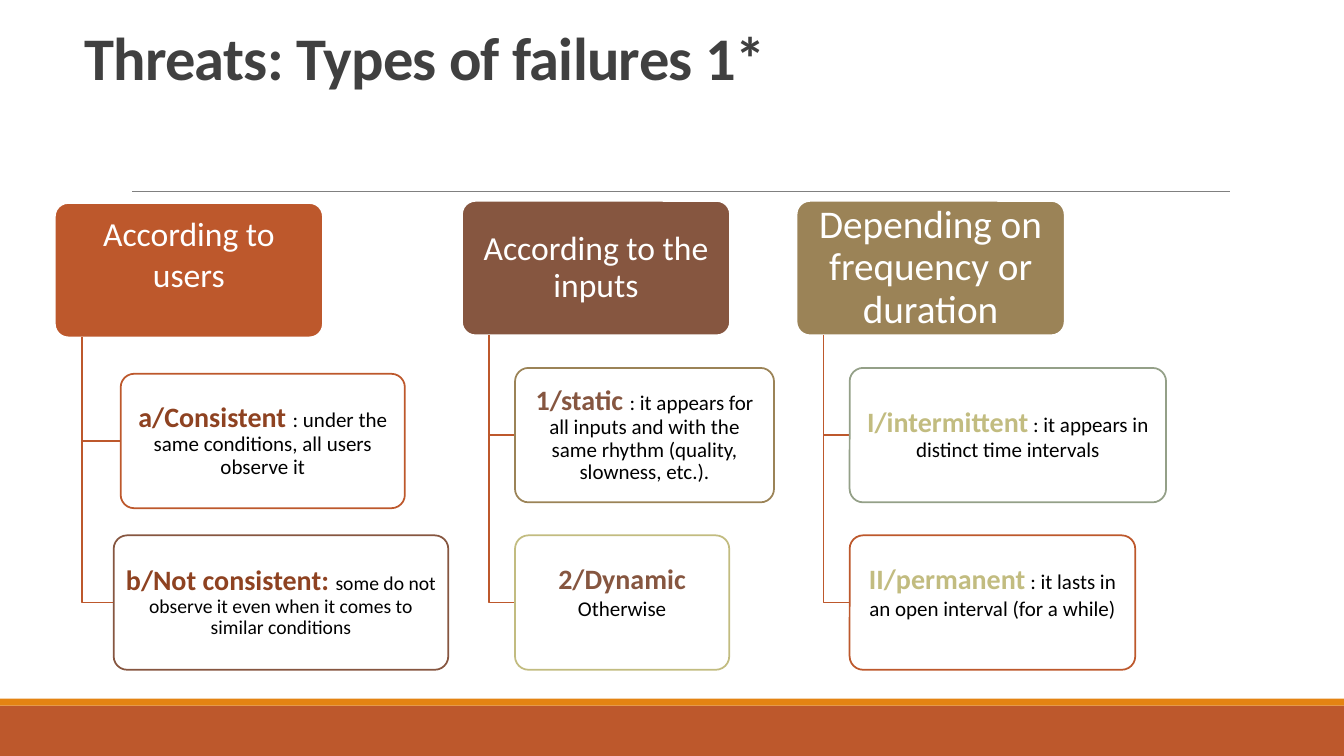
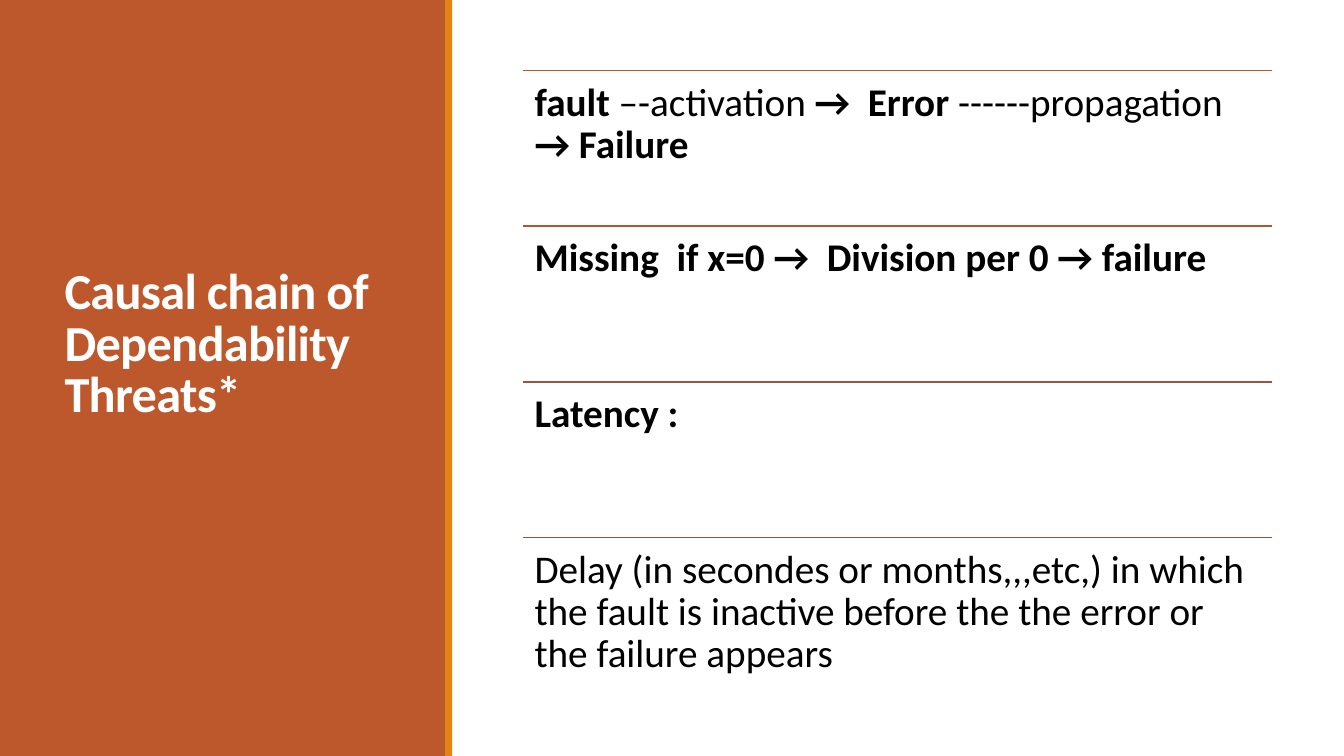
import pptx
import pptx.dml.color
import pptx.enum.shapes
import pptx.enum.text
import pptx.util
from lxml import etree

Pt = pptx.util.Pt
SHAPE = pptx.enum.shapes.MSO_SHAPE
ANCHOR = pptx.enum.text.MSO_ANCHOR
ALIGN = pptx.enum.text.PP_ALIGN

SLIDE_WIDTH, SLIDE_HEIGHT = 960, 540
FONT = "Calibri"
COLORS = {
    "rust": "BD582C",
    "orange": "E48312",
    "brown": "865640",
    "khaki": "9B8357",
    "sage": "94A088",
    "straw": "C2BC80",
    "dark_rust": "8E4221",
    "rust_brown": "AA5834",
    "red_brown": "97573A",
    "title_gray": "404040",
    "rule_gray": "808080",
    "black": "000000",
    "white": "FFFFFF",
}

HEADER_WIDTH, BOX_HEIGHT = 191.5, 96
SPINE_OFFSET = 19.2
BOTTOM_BOX_TOP = 382.4

# Each line of text is a list of runs: (text, size, colour, bold).
# Boxes with "lift" keep that much room free under their text.
FAILURE_TYPES = [
    {
        "left": 39.2, "top": 145, "fill": "rust", "spacing": 1, "lift": 24,
        "lines": [[("According to users", 24, "white", False)]],
        "children": [
            {"left": 86.2, "top": 267, "width": 203, "line": "rust",
             "lines": [[("a/Consistent ", 20, "dark_rust", True),
                        (": under the same conditions, all users observe it",
                         15, "black", False)]]},
            {"left": 81.2, "top": BOTTOM_BOX_TOP, "width": 239, "line": "brown",
             "lines": [[("b/Not consistent: ", 20, "dark_rust", True),
                        ("some do not observe it even when it comes to "
                         "similar conditions", 14, "black", False)]]},
        ],
    },
    {
        "left": 330, "top": 143.5, "fill": "brown",
        "lines": [[("According to the inputs", 24, "white", False)]],
        "children": [
            {"left": 367.9, "top": 262.8, "width": 185, "line": "khaki",
             "lines": [[("1/static ", 20, "brown", True),
                        (": it appears for all inputs and with the same "
                         "rhythm (quality, slowness, etc.).",
                         15, "black", False)]]},
            {"left": 367.9, "top": BOTTOM_BOX_TOP, "width": 153, "line": "straw",
             "spacing": 1, "lift": 16.5,
             "lines": [[("2/Dynamic", 20, "brown", True)],
                       [("Otherwise", 15, "black", False)]]},
        ],
    },
    {
        "left": 569, "top": 143.5, "fill": "khaki",
        "lines": [[("Depending on frequency or duration", 28, "white", False)]],
        "children": [
            {"left": 606.9, "top": 262.8, "width": 226, "line": "sage",
             "lines": [[("I/intermittent", 20, "straw", True),
                        (" : it appears in distinct time intervals",
                         15, "black", False)]]},
            {"left": 606.9, "top": BOTTOM_BOX_TOP, "width": 204, "line": "rust",
             "spacing": 1, "lift": 16.5,
             "lines": [[("II/permanent", 20, "straw", True),
                        (" : it lasts in an open interval (for a while)",
                         15, "black", False)]]},
        ],
    },
]

# Rule colour, then the runs of the row: (text, bold).
CAUSAL_CHAIN = [
    ("rust", [("fault", True), (" –-activation ", False), ("→  Error", True),
              (" ------propagation", False), (" → Failure", True)]),
    ("rust_brown", [("Missing  if x=0 →  Division per 0 → failure", True)]),
    ("red_brown", [("Latency :", True)]),
    ("brown", [("Delay (in secondes or months,,,etc,) in which the fault is "
                "inactive before the the error or the failure appears", False)]),
]


def rgb(color):
    return pptx.dml.color.RGBColor.from_string(COLORS[color])


def write_text(frame, lines, anchor, align=ALIGN.LEFT, spacing=0.9,
               inset=(7.2, 3.6), lift=0, tracking=None):
    """Fill a frame; tracking is in hundredths of a point."""
    frame.word_wrap = True
    frame.vertical_anchor = anchor
    frame.margin_left = frame.margin_right = Pt(inset[0])
    frame.margin_top = Pt(inset[1])
    frame.margin_bottom = Pt(inset[1] + lift)
    for index, runs in enumerate(lines):
        paragraph = frame.add_paragraph() if index else frame.paragraphs[0]
        paragraph.alignment = align
        paragraph.line_spacing = spacing
        paragraph.font.name = FONT
        for text, size, color, bold in runs:
            run = paragraph.add_run()
            run.text = text
            run.font.size = Pt(size)
            run.font.bold = bold
            run.font.color.rgb = rgb(color)
            if tracking is not None:
                run.font._element.set("spc", str(tracking))


def add_text(slide, left, top, width, height, lines, **style):
    box = slide.shapes.add_textbox(Pt(left), Pt(top), Pt(width), Pt(height))
    write_text(box.text_frame, lines, **style)


def add_title(slide, left, top, width, height, text, size, color, anchor):
    add_text(slide, left, top, width, height, [[(text, size, color, True)]],
             anchor=anchor, spacing=0.85, tracking=-50)


def add_band(slide, left, top, width, height, color):
    band = slide.shapes.add_shape(SHAPE.RECTANGLE, Pt(left), Pt(top),
                                  Pt(width), Pt(height))
    band.shadow.inherit = False
    band.fill.solid()
    band.fill.fore_color.rgb = rgb(color)
    band.line.fill.background()


def add_rule(slide, left, right, y, color, weight):
    rule = slide.shapes.add_connector(pptx.enum.shapes.MSO_CONNECTOR.STRAIGHT,
                                      Pt(left), Pt(y), Pt(right), Pt(y))
    rule.line.color.rgb = rgb(color)
    rule.line.width = Pt(weight)
    etree.SubElement(rule._element.spPr, pptx.oxml.ns.qn("a:effectLst"))


def add_box(slide, box, width, fill, line, inset):
    shape = slide.shapes.add_shape(SHAPE.ROUNDED_RECTANGLE, Pt(box["left"]),
                                   Pt(box["top"]), Pt(width), Pt(BOX_HEIGHT))
    shape.adjustments[0] = 0.1
    shape.shadow.inherit = False
    shape.fill.solid()
    shape.fill.fore_color.rgb = rgb(fill)
    shape.line.color.rgb = rgb(line)
    shape.line.width = Pt(1.25)
    write_text(shape.text_frame, box["lines"], ANCHOR.MIDDLE, ALIGN.CENTER,
               box.get("spacing", 0.9), inset, box.get("lift", 0))


def add_branch(slide, x, top, child):
    """Draw the elbow from a header down and across to its child."""
    middle = child["top"] + BOX_HEIGHT / 2
    outline = slide.shapes.build_freeform(Pt(x), Pt(top))
    outline.add_line_segments([(Pt(x), Pt(middle)),
                               (Pt(child["left"]), Pt(middle))], close=False)
    branch = outline.convert_to_shape()
    branch.shadow.inherit = False
    branch.fill.background()
    branch.line.color.rgb = rgb("rust")
    branch.line.width = Pt(1.25)


def add_failure_type(slide, group):
    add_box(slide, group, HEADER_WIDTH, group["fill"], "white", (7, 5))
    for child in group["children"]:
        add_branch(slide, group["left"] + SPINE_OFFSET,
                   group["top"] + BOX_HEIGHT, child)
        add_box(slide, child, child["width"], "white", child["line"], (5.75, 5))


def build_failures_slide(slide):
    add_band(slide, 0, 504, SLIDE_WIDTH, 36, "rust")
    add_band(slide, 0, 499, SLIDE_WIDTH, 5, "orange")
    add_rule(slide, 94.4, 878.8, 136.8, "rule_gray", 0.5)
    add_title(slide, 53, 18.5, 677, 100, "Threats: Types of failures 1*",
              43.2, "title_gray", ANCHOR.TOP)
    for group in FAILURE_TYPES:
        add_failure_type(slide, group)


def build_chain_slide(slide):
    add_band(slide, 0, 0, 319, SLIDE_HEIGHT, "rust")
    add_band(slide, 318, 0, 5, SLIDE_HEIGHT, "orange")
    add_title(slide, 39, 41, 243, 412, "Causal chain of Dependability Threats*",
              36, "white", ANCHOR.MIDDLE)
    left, width, first_top, pitch = 373.5, 535, 50.4, 111.2
    for index, (rule_color, parts) in enumerate(CAUSAL_CHAIN):
        top = first_top + index * pitch
        add_rule(slide, left, left + width, top, rule_color, 1.25)
        runs = [(text, 28, "black", bold) for text, bold in parts]
        add_text(slide, left, top, width, pitch, [runs],
                 anchor=ANCHOR.TOP, inset=(8.4, 8.4))


def main():
    deck = pptx.Presentation()
    deck.slide_width, deck.slide_height = Pt(SLIDE_WIDTH), Pt(SLIDE_HEIGHT)
    blank = deck.slide_layouts[6]
    for build in (build_failures_slide, build_chain_slide):
        build(deck.slides.add_slide(blank))
    deck.save("out.pptx")


if __name__ == "__main__":
    main()
